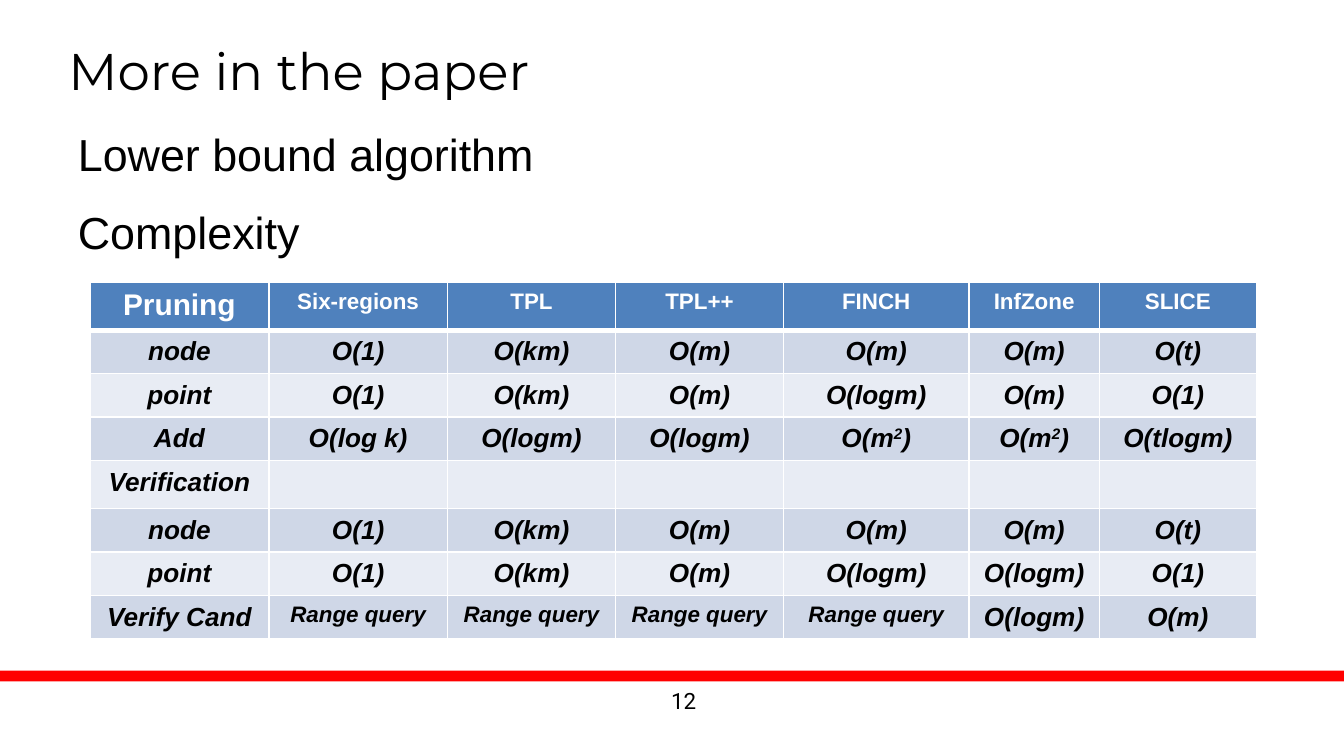
from lxml.etree import SubElement
from pptx import Presentation
from pptx.dml.color import RGBColor
from pptx.enum.shapes import MSO_SHAPE
from pptx.enum.text import MSO_ANCHOR, PP_ALIGN
from pptx.oxml.ns import qn
from pptx.util import Inches, Pt

HEADER = ["Pruning", "Six-regions", "TPL", "TPL++", "FINCH", "InfZone", "SLICE"]
BODY = [
    ["node", "O(1)", "O(km)", "O(m)", "O(m)", "O(m)", "O(t)"],
    ["point", "O(1)", "O(km)", "O(m)", "O(logm)", "O(m)", "O(1)"],
    ["Add", "O(log k)", "O(logm)", "O(logm)", "O(m^2^)", "O(m^2^)", "O(tlogm)"],
    ["Verification"] + [""] * 6,
    ["node", "O(1)", "O(km)", "O(m)", "O(m)", "O(m)", "O(t)"],
    ["point", "O(1)", "O(km)", "O(m)", "O(logm)", "O(logm)", "O(1)"],
    ["Verify Cand"] + ["Range query"] * 4 + ["O(logm)", "O(m)"],
]
COLUMN_WIDTHS = [1.33, 1.33, 1.25, 1.25, 1.38, 0.97, 1.17]
ROW_HEIGHTS = [0.31, 0.29, 0.29, 0.29, 0.31, 0.29, 0.29, 0.15]
BANDS = ["CFD7E7", "E8ECF4"]


def color(value):
    """Turn a hex string into a colour."""
    return RGBColor.from_string(value)


def add_run(paragraph, text, size, font="Arial", hex_color="000000", bold=False, italic=False):
    """Append one styled run to a paragraph."""
    run = paragraph.add_run()
    run.text = text
    run.font.size = Pt(size)
    run.font.name = font
    run.font.bold = bold
    run.font.italic = italic
    run.font.color.rgb = color(hex_color)
    return run


def add_text(slide, box, text, size, font="Arial", margin=0.05, wrap=True,
             anchor=MSO_ANCHOR.TOP, alignment=PP_ALIGN.LEFT):
    """Place a single line of text in the given box."""
    shape = slide.shapes.add_textbox(*map(Inches, box))
    frame = shape.text_frame
    frame.word_wrap = wrap
    frame.vertical_anchor = anchor
    frame.margin_left = frame.margin_right = Inches(margin)
    frame.margin_top = frame.margin_bottom = Inches(margin)
    paragraph = frame.paragraphs[0]
    paragraph.alignment = alignment
    add_run(paragraph, text, size, font)


def set_borders(cell, bottom_width):
    """Draw white borders around a table cell."""
    properties = cell._tc.get_or_add_tcPr()
    for index, (side, width) in enumerate(
            [("lnL", 1), ("lnR", 1), ("lnT", 1), ("lnB", bottom_width)]):
        line = SubElement(properties, qn("a:" + side), w=str(Pt(width)))
        properties.insert(index, line)
        fill = SubElement(line, qn("a:solidFill"))
        SubElement(fill, qn("a:srgbClr"), val="FFFFFF")


def fill_cell(cell, text, size, fill, hex_color, italic, bottom_width):
    """Write and style a cell; text between carets is superscript."""
    cell.fill.solid()
    cell.fill.fore_color.rgb = color(fill)
    cell.margin_left = cell.margin_right = cell.margin_top = Inches(0.05)
    cell.margin_bottom = Inches(0.04)
    set_borders(cell, bottom_width)
    paragraph = cell.text_frame.paragraphs[0]
    paragraph.alignment = PP_ALIGN.CENTER
    if not text:
        SubElement(paragraph._p, qn("a:endParaRPr"), sz="1600")
        return
    for index, part in enumerate(text.split("^")):
        run = add_run(paragraph, part, size, "Arial", hex_color, True, italic)
        if index % 2:
            run._r.get_or_add_rPr().set("baseline", "30000")


def add_complexity_table(slide, left, top):
    """Build the table comparing the complexity of the algorithms."""
    rows = [HEADER] + BODY
    table = slide.shapes.add_table(
        len(rows), len(HEADER), Inches(left), Inches(top),
        Inches(sum(COLUMN_WIDTHS)), Inches(sum(ROW_HEIGHTS))).table
    for column, width in zip(table.columns, COLUMN_WIDTHS):
        column.width = Inches(width)
    for row, height in zip(table.rows, ROW_HEIGHTS):
        row.height = Inches(height)
    for column, text in enumerate(HEADER):
        size = 12 if column else 16
        fill_cell(table.cell(0, column), text, size, "4F81BD", "FFFFFF", False, 3)
    for row, texts in enumerate(BODY, 1):
        for column, text in enumerate(texts):
            size = 12 if text == "Range query" else 14
            fill = BANDS[(row - 1) % 2]
            fill_cell(table.cell(row, column), text, size, fill, "000000", True, 1)


def add_footer(slide, left, top, width):
    """Draw the red rule with the slide number centred below it."""
    rule = slide.shapes.add_shape(
        MSO_SHAPE.RECTANGLE, Inches(left), Inches(top), Inches(width), Inches(0.08))
    rule.shadow.inherit = False
    rule.fill.solid()
    rule.fill.fore_color.rgb = color("FF0000")
    rule.line.fill.background()
    number_box = (left + (width - 0.45) / 2, top + 0.08, 0.45, 0.29)
    add_text(slide, number_box, "12", 12, "Roboto",
             anchor=MSO_ANCHOR.MIDDLE, alignment=PP_ALIGN.RIGHT)


def main():
    """Build and save the presentation."""
    presentation = Presentation()
    presentation.slide_width = Inches(10)
    presentation.slide_height = presentation.slide_width * 9 // 16
    slide = presentation.slides.add_slide(presentation.slide_layouts[6])
    add_footer(slide, -0.08, 4.99, 10.17)
    add_complexity_table(slide, 0.67, 2.1)
    add_text(slide, (0.53, 0.89, 3.5, 0.48), "Lower bound algorithm", 24, wrap=False)
    add_text(slide, (0.53, 1.47, 1.76, 0.48), "Complexity", 24, wrap=False)
    add_text(slide, (0.51, 0.29, 9.06, 0.65), "More in the paper", 27.6, "Montserrat", margin=0)
    presentation.save("out.pptx")


if __name__ == "__main__":
    main()
